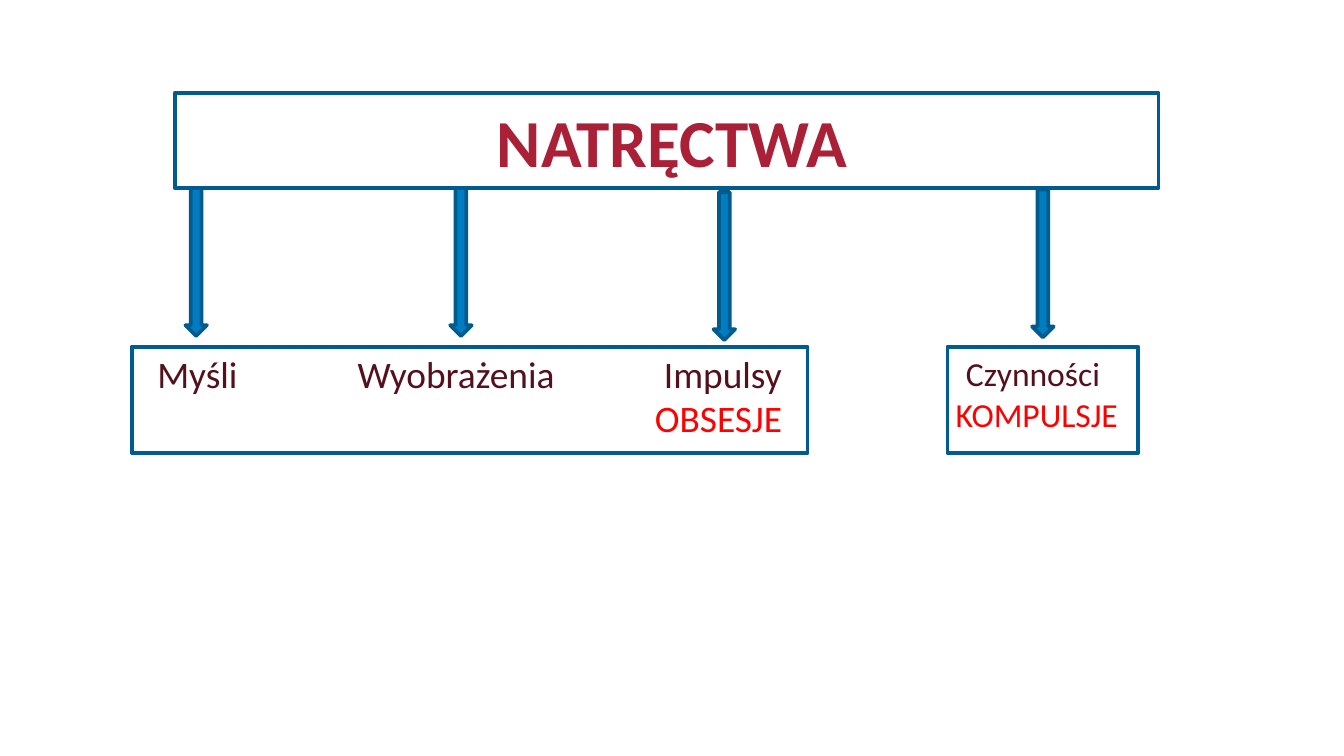
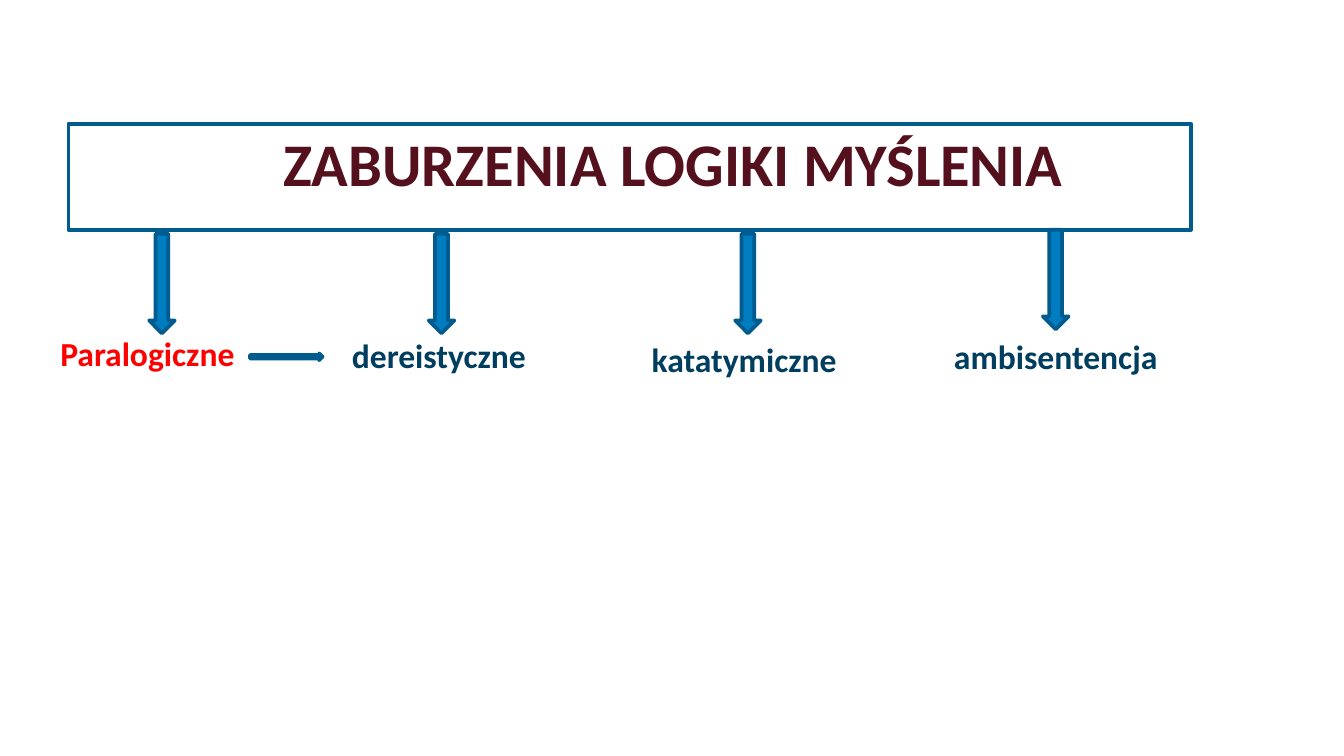
from pptx import Presentation
from pptx.dml.color import RGBColor
from pptx.enum.shapes import MSO_SHAPE
from pptx.enum.text import MSO_ANCHOR, PP_ALIGN
from pptx.oxml.ns import qn
from pptx.util import Inches, Pt
from lxml.etree import SubElement

CRIMSON = RGBColor(0xA9, 0x20, 0x37)
MAROON = RGBColor(0x54, 0x10, 0x1C)
RED = RGBColor(0xFF, 0x00, 0x00)
NAVY = RGBColor(0x00, 0x3E, 0x60)
BLUE = RGBColor(0x00, 0x7D, 0xC1)
OUTLINE = RGBColor(0x00, 0x5C, 0x8F)


class Diagram:
    """Holds the shared style and the current page."""

    font_name = "Calibri"
    line_width = Pt(2)

    def __init__(self):
        self.deck = Presentation()
        # Widescreen, 16:9
        self.deck.slide_width = Inches(10)
        self.deck.slide_height = Inches(10 * 9 / 16)
        self.page = None

    def new_page(self):
        self.page = self.deck.slides.add_slide(self.deck.slide_layouts[6])

    def text(self, left, top, width, height, lines, size, bold=False, wrap=False,
             margins=(0.1, 0.05)):
        """Each line is a tuple: wording, colour, alignment."""
        box = self.page.shapes.add_textbox(
            Inches(left), Inches(top), Inches(width), Inches(height))
        frame = box.text_frame
        frame.word_wrap = wrap
        frame.margin_left = frame.margin_right = Inches(margins[0])
        frame.margin_top = frame.margin_bottom = Inches(margins[1])
        frame.text = "\n".join(wording for wording, _, _ in lines)
        for para, (_, color, alignment) in zip(frame.paragraphs, lines):
            para.alignment = alignment
            for span in para.runs:
                span.font.name = self.font_name
                span.font.size = Pt(size)
                span.font.bold = bold
                span.font.color.rgb = color
        return frame

    def title(self, left, top, height, wording, size, color):
        frame = self.text(left, top, 9, height, [(wording, color, PP_ALIGN.CENTER)],
                          size, bold=True, wrap=True, margins=(0.1, 0))
        frame.vertical_anchor = MSO_ANCHOR.MIDDLE

    def tab_stops(self, para, *stops):
        properties = para._p.get_or_add_pPr()
        tab_list = SubElement(properties, qn("a:tabLst"))
        for position in stops:
            SubElement(tab_list, qn("a:tab"), pos=str(Inches(position)), algn="l")

    def shape(self, kind, left, top, width, height, fill=None):
        shape = self.page.shapes.add_shape(
            kind, Inches(left), Inches(top), Inches(width), Inches(height))
        shape.shadow.inherit = False
        if fill is None:
            shape.fill.background()
        else:
            shape.fill.solid()
            shape.fill.fore_color.rgb = fill
        shape.line.color.rgb = OUTLINE
        shape.line.width = self.line_width

    def frame(self, left, top, width, height):
        self.shape(MSO_SHAPE.RECTANGLE, left, top, width, height)

    def down_arrows(self, width, height, places):
        for left, top in places:
            self.shape(MSO_SHAPE.DOWN_ARROW, left, top, width, height, BLUE)

    def right_arrow(self, left, top, width, height):
        self.shape(MSO_SHAPE.RIGHT_ARROW, left, top, width, height, BLUE)


def build_intrusions(diagram):
    diagram.new_page()
    diagram.title(0.5, 0.74, 0.61, "NATRĘCTWA", 36, CRIMSON)
    diagram.frame(1.3, 0.69, 7.32, 0.71)

    # Obsessions
    obsessions = diagram.text(
        1.17, 2.61, 4.65, 0.7,
        [("Myśli\tWyobrażenia\tImpulsy", MAROON, PP_ALIGN.LEFT),
         ("OBSESJE", RED, PP_ALIGN.RIGHT)],
        20, margins=(0, 0), wrap=True)
    diagram.tab_stops(obsessions.paragraphs[0], 1.49, 3.77)
    diagram.frame(0.98, 2.58, 5.03, 0.79)

    # Compulsions
    diagram.text(6.9, 2.58, 1.63, 0.71,
                 [("Czynności ", MAROON, PP_ALIGN.CENTER),
                  ("KOMPULSJE", RED, PP_ALIGN.CENTER)], 18)
    diagram.frame(7.05, 2.58, 1.42, 0.79)

    diagram.down_arrows(0.16, 1.1, [(1.38, 1.4), (3.35, 1.4), (5.31, 1.43), (7.68, 1.41)])


def build_logic_disorders(diagram):
    diagram.new_page()
    diagram.title(0.51, 0.93, 0.55, "ZABURZENIA LOGIKI MYŚLENIA", 32.4, MAROON)

    # Kinds of disorder
    kinds = [
        ("Paralogiczne", 0.35, 2.43, 1.51, RED),
        ("dereistyczne", 2.52, 2.44, 1.5, NAVY),
        ("katatymiczne", 4.75, 2.47, 1.58, NAVY),
        ("ambisentencja", 7, 2.45, 1.73, NAVY),
    ]
    for wording, left, top, width, color in kinds:
        diagram.text(left, top, width, 0.4, [(wording, color, PP_ALIGN.LEFT)], 18, bold=True)

    # Frame and arrows
    diagram.right_arrow(1.86, 2.63, 0.54, 0.05)
    diagram.frame(0.51, 0.92, 8.35, 0.79)
    diagram.down_arrows(0.19, 0.74, [(1.11, 1.74), (3.19, 1.74), (5.47, 1.74), (7.76, 1.71)])


def main():
    diagram = Diagram()
    build_intrusions(diagram)
    build_logic_disorders(diagram)
    diagram.deck.save("out.pptx")


if __name__ == "__main__":
    main()
